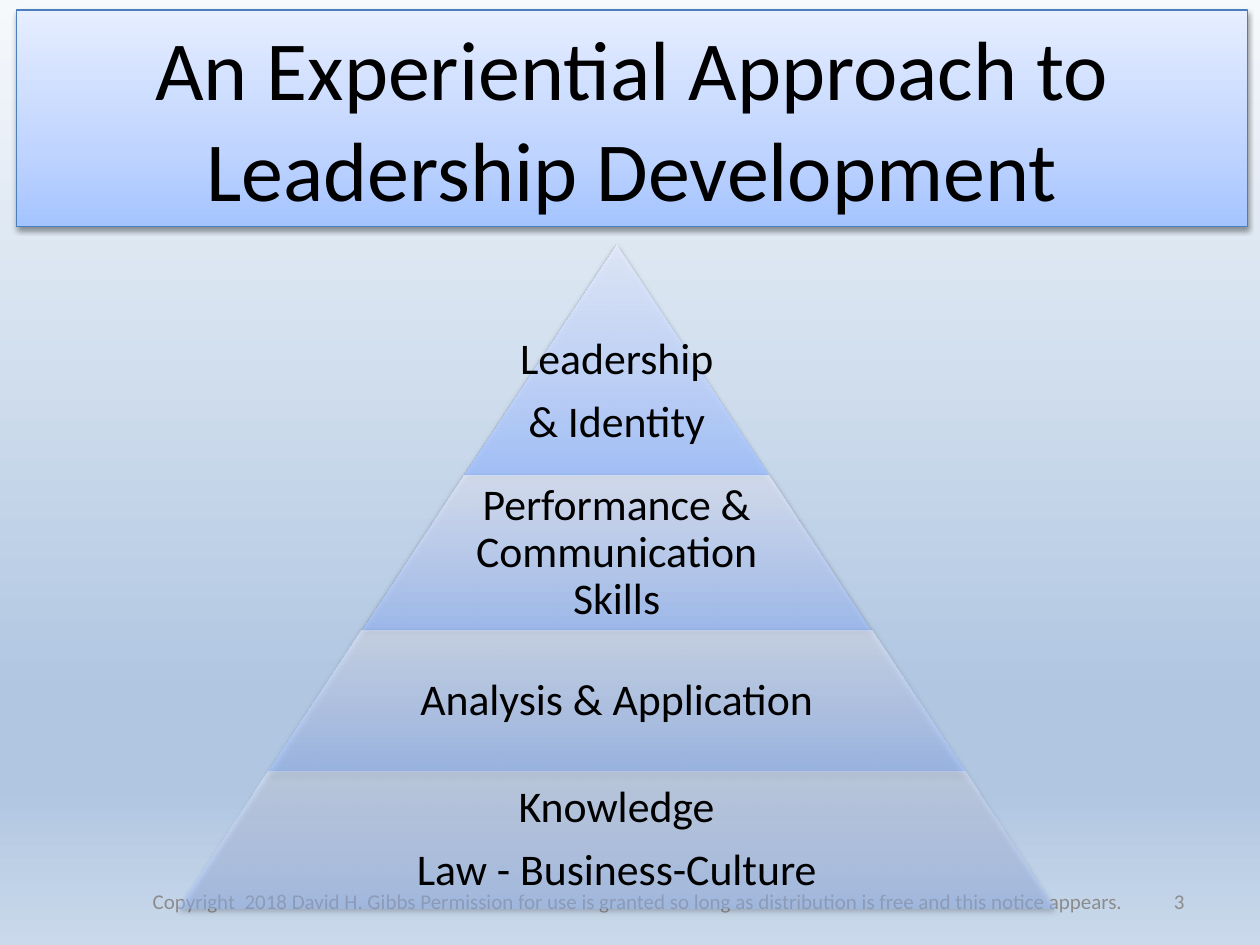
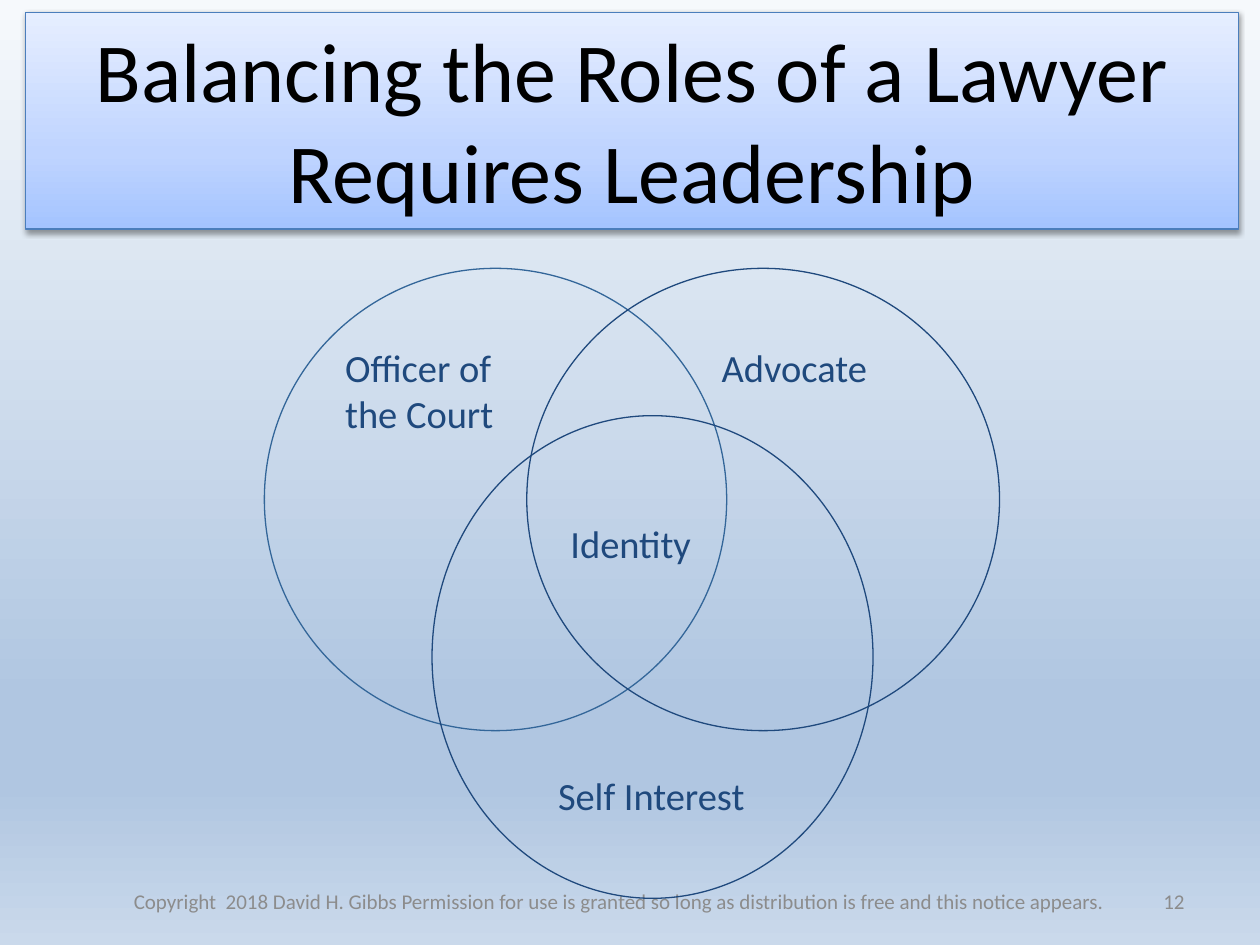
"""Build two leadership slides: a skills pyramid and a diagram of a lawyer's roles."""
from lxml import etree
from pptx import Presentation
from pptx import util as u
from pptx.dml import color
from pptx.enum import shapes, text
from pptx.oxml import ns

COLOURS = {"ink": "000000", "navy": "1F497D", "steel": "336699",
           "edge": "4B7EBC", "grey": "8C8C8C"}
BAND = [(0, "A4C4FF"), (35, "BFD4FF"), (100, "E6EEFF")]
SKY = [(0, "F6F9FC"), (74, "B0C6E1"), (83, "B0C6E1"), (100, "CAD9EB")]
NOTICE = ("Copyright  2018 David H. Gibbs Permission for use is granted "
          "so long as distribution is free and this notice appears.")
LEFT, CENTRE, RIGHT = text.PP_ALIGN.LEFT, text.PP_ALIGN.CENTER, text.PP_ALIGN.RIGHT
TOP, MIDDLE = text.MSO_ANCHOR.TOP, text.MSO_ANCHOR.MIDDLE
FORMATS = {
    "title": {"font": {"size": u.Pt(48)}, "colour": "ink",
              "para": {"alignment": CENTRE}, "frame": {"vertical_anchor": TOP}},
    "level": {"font": {"size": u.Pt(25)}, "colour": "ink",
              "para": {"alignment": CENTRE, "line_spacing": 0.9, "space_after": u.Pt(8.75)},
              "frame": {"vertical_anchor": MIDDLE, "margin_left": u.Cm(0.08),
                        "margin_right": u.Cm(0.08), "margin_top": u.Cm(0.08),
                        "margin_bottom": u.Cm(0.08)}},
    "role": {"font": {"size": u.Pt(22)}, "colour": "navy",
             "para": {"alignment": LEFT}, "frame": {"vertical_anchor": TOP}},
    "notice": {"font": {"size": u.Pt(12)}, "colour": "grey",
               "para": {"alignment": CENTRE}, "frame": {"vertical_anchor": MIDDLE}},
    "number": {"font": {"size": u.Pt(12)}, "colour": "grey",
               "para": {"alignment": RIGHT}, "frame": {"vertical_anchor": MIDDLE}},
}


def assign(target, values):
    """Set each named attribute of the target."""
    for name, value in values.items():
        setattr(target, name, value)


def lengths(*values):
    """Turn centimetres into lengths."""
    return [u.Cm(value) for value in values]


class SlideBuilder:
    """Holds the shared style and the slide being built."""

    def __init__(self):
        """Open an empty deck of the right size."""
        self.deck = Presentation()
        assign(self.deck, {"slide_width": u.Cm(25.4), "slide_height": u.Cm(19.05)})
        self.page = None

    def new_page(self, number, notice_left, notice_width):
        """Start a slide with the shared background and footer."""
        self.page = self.deck.slides.add_slide(self.deck.slide_layouts[5])
        self.gradient(self.page.background.fill, self.page.element, SKY, 90)
        self.label("notice", [NOTICE], notice_left, 17.65, notice_width, 1.02)
        self.label("number", [str(number)], 18.21, 17.65, 5.92, 1.02)

    def gradient(self, fill, element, stops, angle, opacity=100):
        """Replace a fill with a linear gradient."""
        fill.solid()
        fill.fore_color.rgb = color.RGBColor(0, 0, 0)
        solid = element.xpath(".//a:solidFill")[0]
        blend = etree.Element(ns.qn("a:gradFill"), rotWithShape="1")
        stop_list = etree.SubElement(blend, ns.qn("a:gsLst"))
        for position, colour in stops:
            stop = etree.SubElement(stop_list, ns.qn("a:gs"), pos=str(position * 1000))
            tint = etree.SubElement(stop, ns.qn("a:srgbClr"), val=colour)
            if opacity < 100:
                etree.SubElement(tint, ns.qn("a:alpha"), val=str(opacity * 1000))
        etree.SubElement(blend, ns.qn("a:lin"), ang=str(angle * 60000), scaled="0")
        solid.getparent().replace(solid, blend)

    def outline(self, shape, colour):
        """Draw a thin line round a shape."""
        shape.line.color.rgb = color.RGBColor.from_string(COLOURS[colour])
        shape.line.width = u.Pt(0.75)

    def shadow(self, shape):
        """Cast a soft shadow below a shape."""
        properties = shape.element.spPr
        effects = properties.find(ns.qn("a:effectLst"))
        if effects is None:
            effects = etree.SubElement(properties, ns.qn("a:effectLst"))
        cast = etree.SubElement(effects, ns.qn("a:outerShdw"), blurRad="40000",
                                dist="20000", dir="5400000", rotWithShape="0")
        shade = etree.SubElement(cast, ns.qn("a:srgbClr"), val=COLOURS["ink"])
        etree.SubElement(shade, ns.qn("a:alpha"), val="38000")

    def put_text(self, shape, style, lines):
        """Put formatted paragraphs into a shape."""
        form = FORMATS[style]
        frame = shape.text_frame
        assign(frame, {"word_wrap": True, "auto_size": text.MSO_AUTO_SIZE.NONE})
        assign(frame, form["frame"])
        for index, line in enumerate(lines):
            para = frame.add_paragraph() if index else frame.paragraphs[0]
            assign(para, form["para"])
            span = para.add_run()
            span.text = line
            assign(span.font, {"name": "Calibri", **form["font"]})
            span.font.color.rgb = color.RGBColor.from_string(COLOURS[form["colour"]])

    def title(self, lines, left, top, width, height):
        """Format the title placeholder as a shaded band."""
        band = self.page.shapes.title
        assign(band, dict(zip(("left", "top", "width", "height"),
                              lengths(left, top, width, height))))
        self.gradient(band.fill, band.element, BAND, 270)
        self.outline(band, "edge")
        self.shadow(band)
        self.put_text(band, "title", lines)

    def label(self, style, lines, left, top, width, height):
        """Add a text box."""
        box = self.page.shapes.add_textbox(*lengths(left, top, width, height))
        self.put_text(box, style, lines)

    def tier(self, left, top, width, height, slope, opacity):
        """Add one shaded tier of a pyramid."""
        tier = self.page.shapes.add_shape(shapes.MSO_SHAPE.TRAPEZOID,
                                          *lengths(left, top, width, height))
        tier.adjustments[0] = slope
        tier.shadow.inherit = False
        self.gradient(tier.fill, tier.element, BAND, 270, opacity)
        tier.line.fill.background()
        self.shadow(tier)

    def circle(self, colour, left, top, width, height):
        """Add an unfilled circle."""
        circle = self.page.shapes.add_shape(shapes.MSO_SHAPE.OVAL,
                                            *lengths(left, top, width, height))
        circle.shadow.inherit = False
        circle.fill.background()
        self.outline(circle, colour)


def pyramid_page(builder):
    """Build the pyramid slide."""
    builder.new_page(3, 0.33, 25.07)
    builder.title(["An Experiential Approach to", "Leadership Development"],
                  0.33, 0.2, 24.82, 4.37)
    apex, centre, slope = 4.93, 12.43, 0.661
    tiers = [
        (9.59, 90, 1, 1.27, ["Leadership", "& Identity"]),
        (12.71, 77, 0.65, 0, ["Performance & Communication Skills"]),
        (15.56, 63, 0.65, 0, ["Analysis & Application"]),
        (18.31, 50, 0.65, 0, ["Knowledge", "Law - Business-Culture"]),
    ]
    top = apex
    for bottom, opacity, share, drop, lines in tiers:
        width = 2 * slope * (bottom - apex)
        builder.tier(centre - width / 2, top, width, bottom - top, slope, opacity)
        builder.label("level", lines, centre - width * share / 2, top + drop,
                      width * share, bottom - top - drop)
        top = bottom


def roles_page(builder):
    """Build the overlapping roles slide."""
    builder.new_page(12, 0, 24.97)
    builder.title(["Balancing the Roles of a Lawyer Requires Leadership"],
                  0.51, 0.25, 24.46, 4.37)
    builder.circle("steel", 5.33, 5.41, 9.32, 9.32)
    builder.circle("navy", 10.62, 5.41, 9.53, 9.32)
    builder.circle("navy", 8.71, 8.38, 8.89, 9.73)
    roles = [
        (["Officer of", "the Court"], 6.71, 6.81),
        (["Advocate"], 14.3, 6.81),
        (["Identity"], 11.25, 10.36),
        (["Self Interest"], 11, 15.44),
    ]
    for lines, left, top in roles:
        builder.label("role", lines, left, top, 4.5, 0.25 + 0.95 * len(lines))


def main():
    """Build and save the deck."""
    builder = SlideBuilder()
    pyramid_page(builder)
    roles_page(builder)
    builder.deck.save("out.pptx")


if __name__ == "__main__":
    main()
